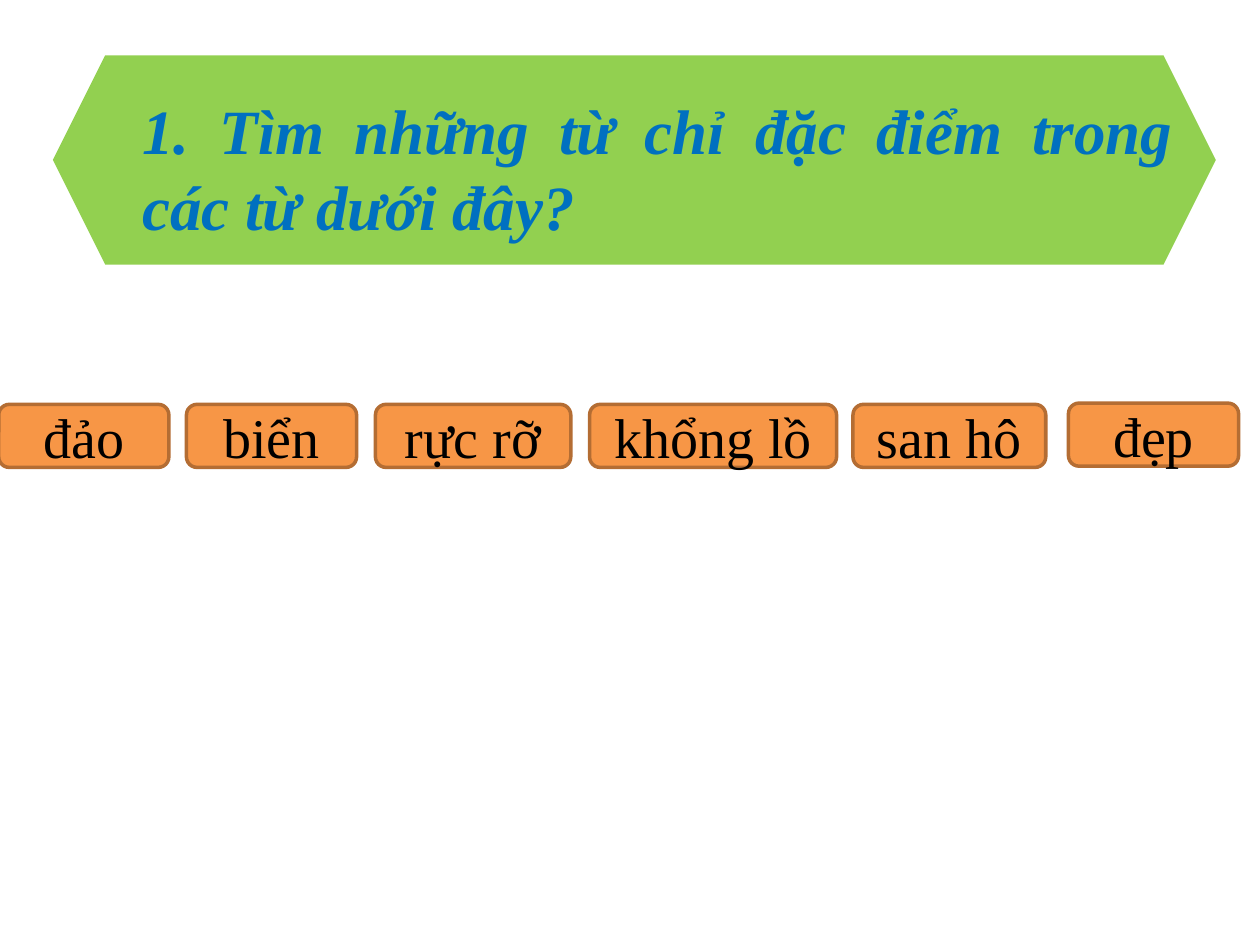
"""Build a Vietnamese vocabulary slide with a question banner and a row of word cards."""
from dataclasses import dataclass

from pptx import Presentation
from pptx import util as u
from pptx.dml.color import RGBColor
from pptx.enum import shapes, text

FONT = "Times New Roman"


@dataclass(frozen=True)
class WordCard:
    """A word with the place and width of its card in inches."""
    word: str
    left: float
    width: float
    top: float = 3.21


CARDS = [
    WordCard("đảo", -0.01, 1.35),
    WordCard("biển", 1.48, 1.35),
    WordCard("rực rỡ", 2.98, 1.55),
    WordCard("khổng lồ", 4.68, 1.96),
    WordCard("san hô", 6.77, 1.53),
    WordCard("đẹp", 8.48, 1.35, 3.2),
]


def colour(value: str) -> RGBColor:
    """Turn a hex string into a colour."""
    return RGBColor.from_string(value)


def write(box, words: str, size: int, ink: str, align, emphasis: bool = False) -> None:
    """Write one paragraph into a box."""
    box.text_frame.word_wrap = True
    para = box.text_frame.paragraphs[0]
    para.alignment = align
    span = para.add_run()
    span.text = words
    span.font.name = FONT
    span.font.size = u.Pt(size)
    span.font.bold = span.font.italic = emphasis
    span.font.color.rgb = colour(ink)


def add_filled(page, kind, left: float, top: float, width: float, height: float, fill: str):
    """Add a flat filled shape without an outline."""
    box = page.shapes.add_shape(kind, u.Inches(left), u.Inches(top), u.Inches(width), u.Inches(height))
    box.shadow.inherit = False
    box.fill.solid()
    box.fill.fore_color.rgb = colour(fill)
    box.line.fill.background()
    return box


def add_question(page) -> None:
    """Draw the banner and its question."""
    add_filled(page, shapes.MSO_SHAPE.HEXAGON, 0.42, 0.44, 9.23, 1.66, "92D050")
    box = page.shapes.add_textbox(u.Inches(1.03), u.Inches(0.68), u.Inches(8.38), u.Inches(1.31))
    write(box, "1. Tìm những từ chỉ đặc điểm trong các từ dưới đây?", 36, "0070C0",
          text.PP_ALIGN.JUSTIFY, emphasis=True)
    box.text_frame.auto_size = text.MSO_AUTO_SIZE.SHAPE_TO_FIT_TEXT


def add_card(page, card: WordCard) -> None:
    """Draw one outlined word card."""
    box = add_filled(page, shapes.MSO_SHAPE.ROUNDED_RECTANGLE, card.left, card.top, card.width, 0.5, "F79646")
    box.line.color.rgb = colour("B46D33")
    box.line.width = u.Pt(2)
    box.text_frame.vertical_anchor = text.MSO_ANCHOR.MIDDLE
    write(box, card.word, 32, "000000", text.PP_ALIGN.CENTER)


def main() -> None:
    """Build and save the deck."""
    deck = Presentation()
    deck.slide_width, deck.slide_height = u.Inches(10), u.Inches(7.5)
    page = deck.slides.add_slide(deck.slide_layouts[6])
    add_question(page)
    for card in CARDS:
        add_card(page, card)
    deck.save("out.pptx")


if __name__ == "__main__":
    main()
